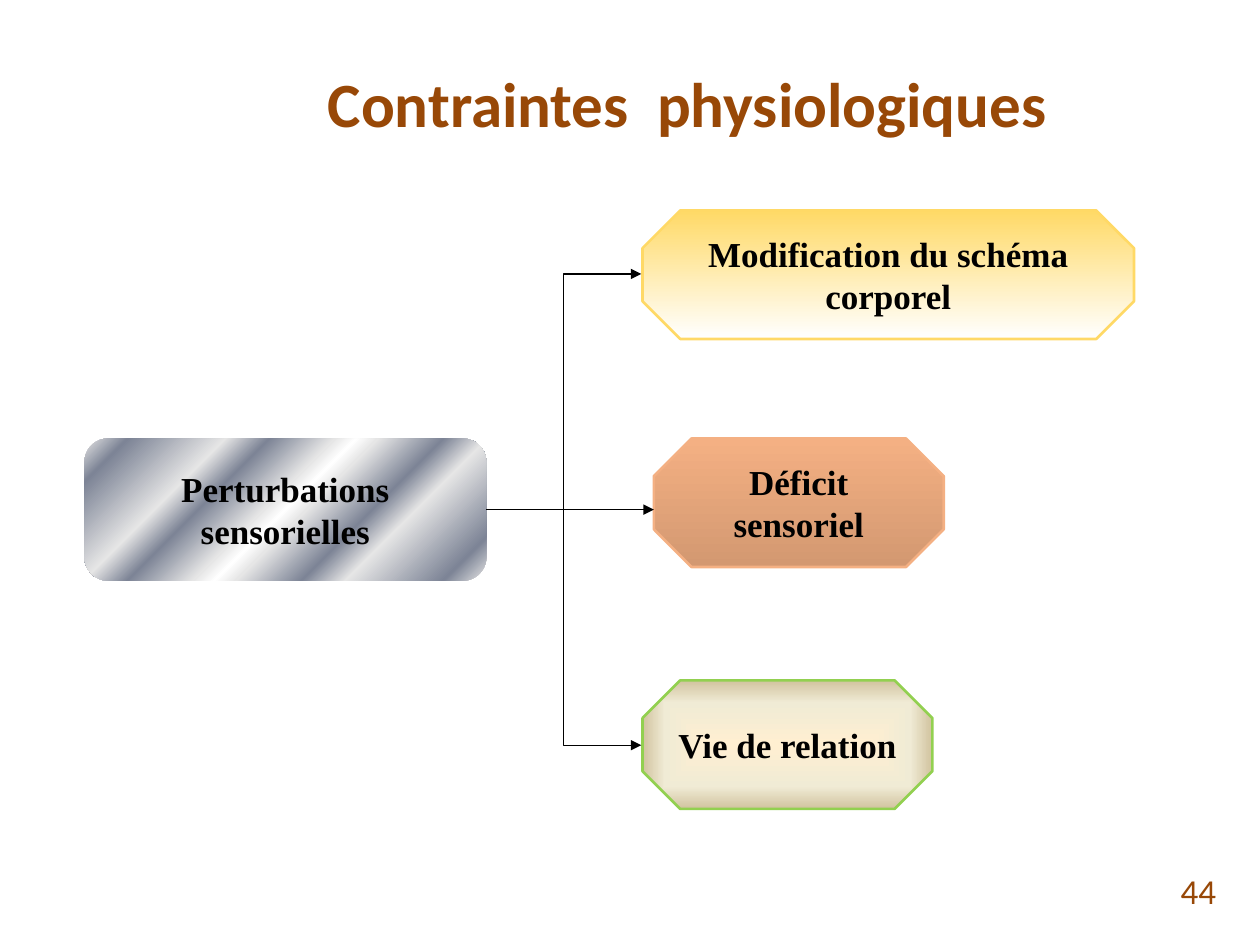
from lxml import etree
from pptx import Presentation
from pptx.dml.color import RGBColor
from pptx.enum.shapes import MSO_CONNECTOR as CONN, MSO_SHAPE as SHAPE
from pptx.enum.text import MSO_ANCHOR as ANCHOR, PP_ALIGN as ALIGN
from pptx.oxml import parse_xml
from pptx.oxml.ns import nsdecls, qn
from pptx.util import Inches, Pt

BROWN, BLACK = "984807", "000000"
LINEAR = '<a:lin ang="{}" scaled="0"/>'
FROM_CENTRE = ('<a:path path="shape"><a:fillToRect l="50000" t="50000" '
               'r="50000" b="50000"/></a:path>')
SILVER = [(0, "E6E6E6"), (8, "7D8496"), (26, "E6E6E6"), (34, "7D8496"),
          (46, "E6E6E6"), (50, "FFFFFF"), (54, "E6E6E6"), (66, "7D8496"),
          (74, "E6E6E6"), (92, "7D8496"), (100, "E6E6E6")]
CREAM = [(0, "FFEFD1"), (65, "F0EBD5"), (100, "D1C39F")]


def rgb(value):
    return RGBColor.from_string(value)


def linear(angle):
    return LINEAR.format(angle * 60000)


def set_gradient(sp, stops, direction):
    marks = "".join(f'<a:gs pos="{pos * 1000}"><a:srgbClr val="{color}"/></a:gs>'
                    for pos, color in stops)
    sp.fill.background()
    spPr = sp._element.spPr
    spPr.replace(spPr.find(qn("a:noFill")), parse_xml(
        f'<a:gradFill {nsdecls("a")} rotWithShape="1">'
        f'<a:gsLst>{marks}</a:gsLst>{direction}</a:gradFill>'))


def write(sp, text, font, size, color, align, bold=False):
    tf = sp.text_frame
    tf.word_wrap = True
    tf.vertical_anchor = ANCHOR.MIDDLE
    p = tf.paragraphs[0]
    p.text = text
    p.alignment = align
    f = p.runs[0].font
    f.name, f.size, f.bold = font, Pt(size), bold
    f.color.rgb = rgb(color)
    return p


def add_label(s, box, text, size, align, bold=False):
    sp = s.shapes.add_textbox(*map(Inches, box))
    write(sp, text, "Calibri", size, BROWN, align, bold)


def add_node(s, kind, box, adj, text, stops, direction, border=None):
    sp = s.shapes.add_shape(kind, *map(Inches, box))
    sp.shadow.inherit = False
    sp.adjustments[0] = adj
    set_gradient(sp, stops, direction)
    if border:
        sp.line.color.rgb = rgb(border)
        sp.line.width = Pt(1.5)
    else:
        sp.line.fill.background()
    p = write(sp, text, "Times New Roman", 20, BLACK, ALIGN.CENTER, True)
    p.space_after = Pt(8)


def add_arrow(s, kind, start, end):
    c = s.shapes.add_connector(kind, *map(Inches, start + end))
    c.line.color.rgb = rgb(BLACK)
    c.line.width = Pt(0.75)
    etree.SubElement(c.line._get_or_add_ln(), qn("a:tailEnd"), type="triangle")
    etree.SubElement(c._element.spPr, qn("a:effectLst"))


def add_constraint_tree(s, left, top):
    """Place the cause on the left and its three effects on the right."""
    cause_w, cause_h, effect_h = 3.19, 1.13, 1.02
    cause_top = top + 1.81
    effects = [
        (5.1, top, 3.9, "Modification du schéma corporel",
         [(0, "FFD966"), (100, "FFFFFF")], linear(90), "FFD966"),
        (5.19, cause_top, 2.3, "Déficit sensoriel",
         [(0, "F4B083"), (100, "D39871")], linear(90), "F4B083"),
        (5.1, top + 3.73, 2.3, "Vie de relation", CREAM, FROM_CENTRE, "92D050"),
    ]
    add_node(s, SHAPE.ROUNDED_RECTANGLE, (left, cause_top, cause_w, cause_h),
             0.167, "Perturbations sensorielles", SILVER, linear(45))
    for x, y, w, text, stops, direction, border in effects:
        add_node(s, SHAPE.OCTAGON, (x, y, w, effect_h), 0.293,
                 text, stops, direction, border)

    right, middle = left + cause_w, cause_top + cause_h / 2
    for y in (middle - 1.87, middle + 1.87):
        add_arrow(s, CONN.ELBOW, (right, middle), (5.09, y))
    add_arrow(s, CONN.STRAIGHT, (right + 0.09, middle), (5.19, middle))


def main():
    prs = Presentation()
    prs.slide_width, prs.slide_height = Inches(10), Inches(7.5)
    s = prs.slides.add_slide(prs.slide_layouts[6])
    add_label(s, (1.22, 0.3, 8.47, 1.03), "Contraintes  physiologiques",
              36, ALIGN.CENTER, True)
    add_label(s, (7.42, 6.87, 2.33, 0.4), "44", 20, ALIGN.RIGHT)
    add_constraint_tree(s, 0.67, 1.67)
    prs.save("out.pptx")


if __name__ == "__main__":
    main()
